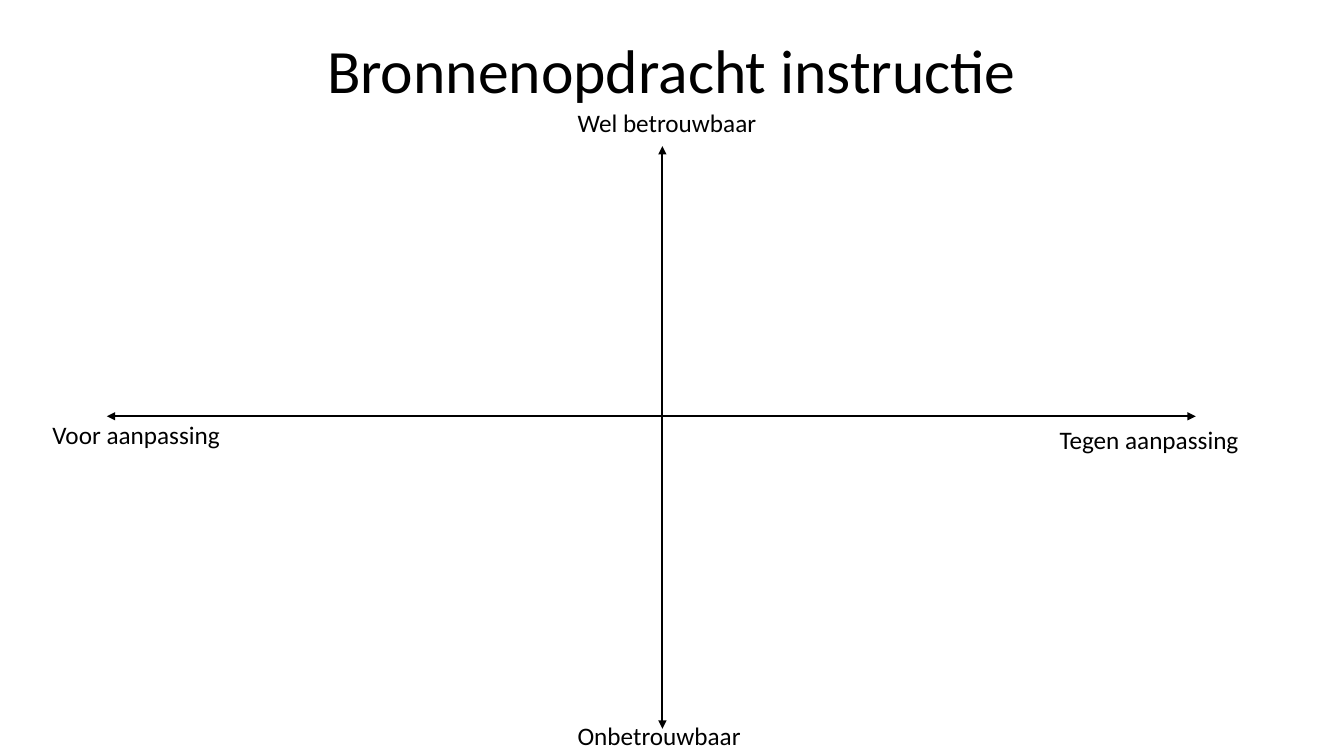
from dataclasses import dataclass

from lxml import etree
from pptx import Presentation
from pptx.dml.color import RGBColor
from pptx.enum import shapes, text
from pptx.oxml import ns
from pptx.slide import Slide
from pptx.util import Inches, Pt


@dataclass(frozen=True)
class Theme:
    font: str = "Calibri"
    ink: RGBColor = RGBColor(0, 0, 0)
    title_size: int = 44
    label_size: int = 18
    axis_width: float = 1.5


@dataclass(frozen=True)
class Caption:
    wording: str
    left: float
    top: float
    width: float = 2.35
    height: float = 0.4
    size: int = Theme.label_size
    align: text.PP_ALIGN = text.PP_ALIGN.LEFT
    anchor: text.MSO_ANCHOR = text.MSO_ANCHOR.TOP
    auto_size: text.MSO_AUTO_SIZE = text.MSO_AUTO_SIZE.SHAPE_TO_FIT_TEXT
    line_spacing: float = 1.0


@dataclass(frozen=True)
class Axis:
    x1: float
    y1: float
    x2: float
    y2: float


THEME = Theme()
SLIDE_WIDTH, SLIDE_HEIGHT = 13.33, 7.5
CROSS_X, CROSS_Y = 6.57, 4.13
POLE_LEFT = 5.63

TITLE = Caption(
    "Bronnenopdracht instructie", 0, 0, SLIDE_WIDTH, 1.45,
    size=THEME.title_size,
    align=text.PP_ALIGN.CENTER,
    anchor=text.MSO_ANCHOR.MIDDLE,
    auto_size=text.MSO_AUTO_SIZE.NONE,
    line_spacing=0.9,
)
AXES = [
    Axis(1.06, CROSS_Y, 11.86, CROSS_Y),
    Axis(CROSS_X, 1.45, CROSS_X, 7.23),
]
POLES = [
    Caption("Voor aanpassing", 0.42, 4.11),
    Caption("Tegen aanpassing", 10.41, 4.16),
    Caption("Wel betrouwbaar", POLE_LEFT, 1.02),
    Caption("Onbetrouwbaar", POLE_LEFT, 7.1),
]


def add_caption(slide: Slide, caption: Caption) -> None:
    box = slide.shapes.add_textbox(
        Inches(caption.left), Inches(caption.top),
        Inches(caption.width), Inches(caption.height),
    )
    frame = box.text_frame
    frame.word_wrap = True
    frame.auto_size = caption.auto_size
    frame.vertical_anchor = caption.anchor
    paragraph = frame.paragraphs[0]
    paragraph.alignment = caption.align
    paragraph.line_spacing = caption.line_spacing
    run = paragraph.add_run()
    run.text = caption.wording
    run.font.name = THEME.font
    run.font.size = Pt(caption.size)
    run.font.color.rgb = THEME.ink


def add_axis(slide: Slide, axis: Axis) -> None:
    """Draw a shadowless line with an arrowhead at both ends."""
    connector = slide.shapes.add_connector(
        shapes.MSO_CONNECTOR.STRAIGHT,
        Inches(axis.x1), Inches(axis.y1), Inches(axis.x2), Inches(axis.y2),
    )
    connector.line.color.rgb = THEME.ink
    connector.line.width = Pt(THEME.axis_width)
    properties = connector.element.spPr
    outline = properties.find(ns.qn("a:ln"))
    for end in ("a:headEnd", "a:tailEnd"):
        etree.SubElement(outline, ns.qn(end), type="triangle")
    etree.SubElement(properties, ns.qn("a:effectLst"))


def main() -> None:
    deck = Presentation()
    deck.slide_width = Inches(SLIDE_WIDTH)
    deck.slide_height = Inches(SLIDE_HEIGHT)
    slide = deck.slides.add_slide(deck.slide_layouts[6])
    add_caption(slide, TITLE)
    for axis in AXES:
        add_axis(slide, axis)
    for pole in POLES:
        add_caption(slide, pole)
    deck.save("out.pptx")


if __name__ == "__main__":
    main()
